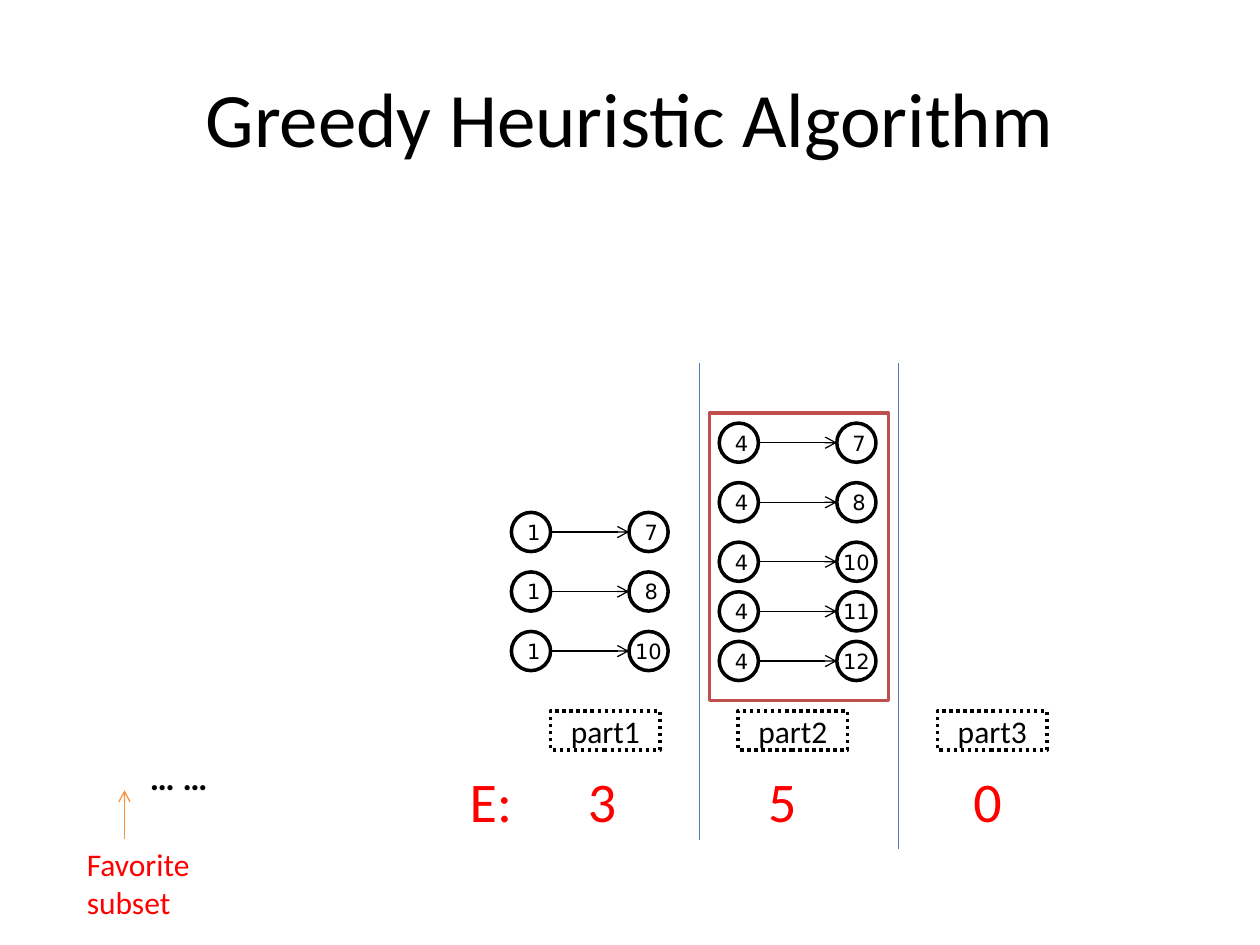
from lxml import etree
from pptx import Presentation
from pptx import util as u
from pptx.dml.color import RGBColor
from pptx.enum import dml, shapes, text
from pptx.oxml import ns

COLOURS = {"ink": "000000", "paper": "FFFFFF", "accent": "FF0000",
           "frame": "C0504D", "divider": "4B7EBC", "pointer": "F69240"}
BODY, DIGITS = "Calibri", "DejaVu Sans"
NODE = 0.79  # diameter of a node, cm


def rgb(name):
    return RGBColor.from_string(COLOURS[name])


class Board:
    """The current slide and the style of its elements; lengths in cm."""

    def __init__(self, slide):
        self.slide = slide

    def set_words(self, shape, words, size, colour="ink", font=BODY, bold=False, align=None):
        shape.text_frame.text = words
        for paragraph in shape.text_frame.paragraphs:
            paragraph.alignment = align
            for run in paragraph.runs:
                run.font.size = u.Pt(size)
                run.font.name = font
                run.font.bold = bold
                run.font.color.rgb = rgb(colour)

    def label(self, x, y, w, h, words, size, wrap=False, **style):
        box = self.slide.shapes.add_textbox(u.Cm(x), u.Cm(y), u.Cm(w), u.Cm(h))
        box.text_frame.word_wrap = wrap
        self.set_words(box, words, size, **style)
        return box

    def outline(self, kind, x, y, w, h, line="ink"):
        shape = self.slide.shapes.add_shape(kind, u.Cm(x), u.Cm(y), u.Cm(w), u.Cm(h))
        shape.shadow.inherit = False
        shape.fill.solid()
        shape.fill.fore_color.rgb = rgb("paper")
        shape.line.color.rgb = rgb(line)
        shape.line.width = u.Pt(2)
        return shape

    def node(self, x, y, number):
        circle = self.outline(shapes.MSO_SHAPE.OVAL, x, y, NODE, NODE)
        frame = circle.text_frame
        frame.margin_top = frame.margin_bottom = 0
        frame.margin_left = frame.margin_right = u.Cm(0.2 if number < 10 else 0)
        frame.vertical_anchor = text.MSO_ANCHOR.MIDDLE
        self.set_words(circle, str(number), 12, font=DIGITS, align=text.PP_ALIGN.CENTER)

    def line(self, x1, y1, x2, y2, colour="ink", arrow=False):
        link = self.slide.shapes.add_connector(
            shapes.MSO_CONNECTOR.STRAIGHT, u.Cm(x1), u.Cm(y1), u.Cm(x2), u.Cm(y2))
        link.line.color.rgb = rgb(colour)
        link.line.width = u.Pt(0.75)
        properties = link._element.spPr
        if arrow:
            etree.SubElement(properties.find(ns.qn("a:ln")), ns.qn("a:tailEnd"), type="arrow")
        etree.SubElement(properties, ns.qn("a:effectLst"))

    def edge(self, x, y, source, target):
        """Two nodes and the arrow between them."""
        reach = 2.37
        self.node(x, y, source)
        self.line(x + NODE, y + NODE / 2, x + reach, y + NODE / 2, arrow=True)
        self.node(x + reach, y, target)

    def part_tag(self, x, words):
        tag = self.outline(shapes.MSO_SHAPE.RECTANGLE, x, 14.33, 2.21, NODE)
        tag.line.dash_style = dml.MSO_LINE.ROUND_DOT
        tag.text_frame.vertical_anchor = text.MSO_ANCHOR.MIDDLE
        self.set_words(tag, words, 18, align=text.PP_ALIGN.CENTER)

    def tabbed(self, x, y, w, h, entries, stops, size, colour):
        """One row of entries, each centred on its tab stop after the first."""
        row = self.label(x, y, w, h, "\t".join(entries), size, wrap=True, colour=colour)
        properties = row.text_frame.paragraphs[0]._p.get_or_add_pPr()
        tabs = etree.SubElement(properties, ns.qn("a:tabLst"))
        for stop in stops:
            etree.SubElement(tabs, ns.qn("a:tab"), pos=str(u.Cm(stop)), algn="ctr")


def main():
    deck = Presentation()
    deck.slide_width, deck.slide_height = u.Cm(25.4), u.Cm(19.05)
    board = Board(deck.slides.add_slide(deck.slide_layouts[6]))

    # Title
    title = board.label(1.27, 0.76, 22.86, 3.18, "Greedy Heuristic Algorithm", 44,
                        wrap=True, align=text.PP_ALIGN.CENTER)
    title.text_frame.vertical_anchor = text.MSO_ANCHOR.MIDDLE

    # Frame around the chosen part
    board.outline(shapes.MSO_SHAPE.RECTANGLE, 14.3, 8.33, 3.61, 5.79, line="frame")

    # Edges of part 1
    for row, target in enumerate((7, 8, 10)):
        board.edge(10.31, 10.33 + 1.2 * row, 1, target)

    # Edges of part 2, the last two set closer
    tops = (8.53, 9.73, 10.93, 11.93, 12.93)
    for top, target in zip(tops, (7, 8, 10, 11, 12)):
        board.edge(14.5, top, 4, target)

    # Part names and the dividers between them
    for number, left in enumerate((11.1, 14.88, 18.9), start=1):
        board.part_tag(left, f"part{number}")
    for x, bottom in ((14.1, 16.94), (18.11, 17.12)):
        board.line(x, 7.32, x, bottom, "divider")

    # Edge counts
    board.tabbed(9.22, 15.32, 11.7, 1.63, ("E:", "3", "5", "0"),
                 (2.67, 6.3, 10.44), 32, "accent")

    # Favorite subset pointer
    board.label(1.5, 16.92, 2.62, 1.8, "Favorite\nsubset", 18, colour="accent")
    board.line(2.51, 16.92, 2.51, 15.93, "pointer", arrow=True)
    board.label(2.77, 15.11, 1.68, 1.12, "… …", 20, bold=True)

    deck.save("out.pptx")


if __name__ == "__main__":
    main()
